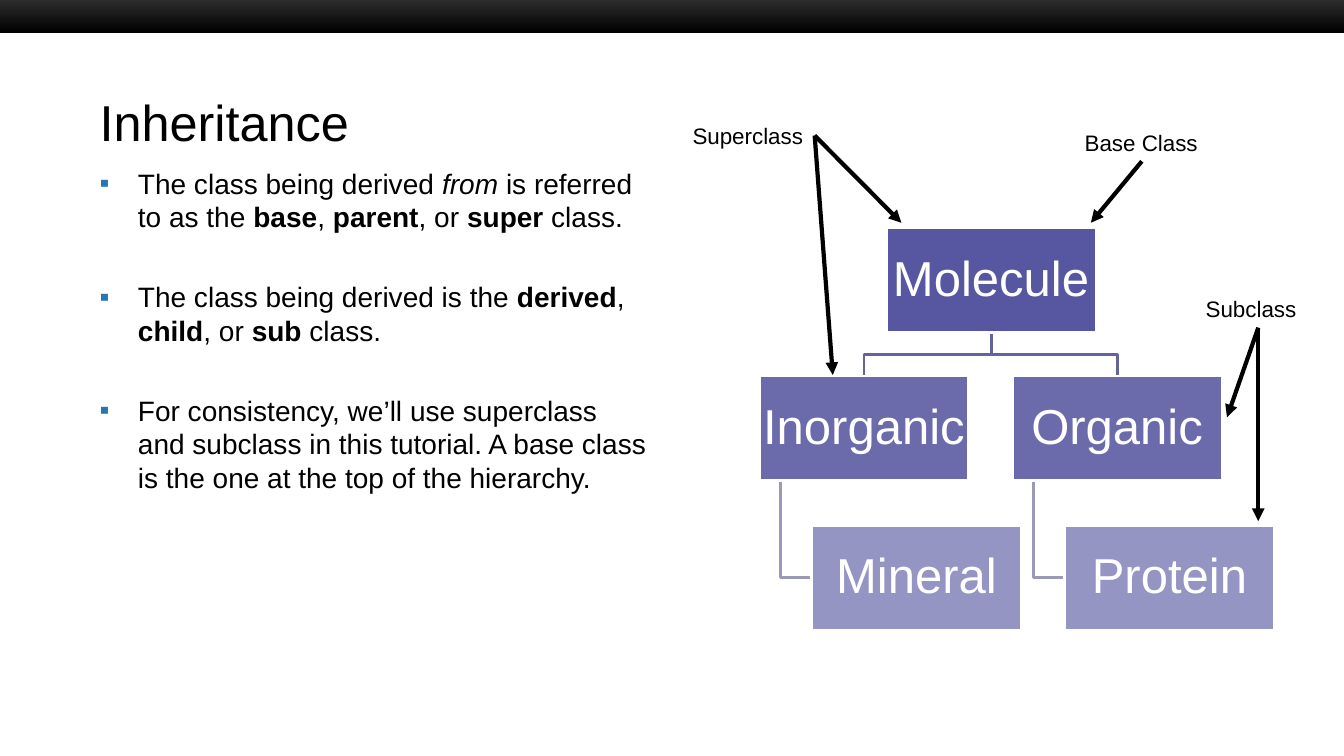
"""Builds the Inheritance slide: bullets beside an annotated class hierarchy."""
from dataclasses import dataclass

from lxml import etree
from pptx import Presentation
from pptx import util as u
from pptx.dml import color
from pptx.enum import shapes, text
from pptx.oxml import ns


@dataclass(frozen=True)
class Theme:
    """Colours, font and type sizes."""
    font: str = "Arial"
    ink: str = "000000"
    paper: str = "FFFFFF"
    bar_top: str = "333333"
    bullet: str = "2675B4"
    node: str = "2D2D8A"
    upper_link: str = "64649B"
    lower_link: str = "9A9AB8"
    title_size: int = 36
    node_size: int = 35
    body_size: int = 20
    label_size: int = 16


THEME = Theme()
NODE_WIDTH, NODE_HEIGHT = 2.08, 1.04
LEVEL_TOPS = (2.26, 3.73, 5.21)
LEVEL_ALPHAS = (80, 70, 50)
NODES = {"Molecule": (8.79, 0), "Inorganic": (7.53, 1), "Mineral": (8.05, 2),
         "Organic": (10.04, 1), "Protein": (10.56, 2)}
LINKS = (("Organic", "Protein"), ("Molecule", "Organic"),
         ("Inorganic", "Mineral"), ("Molecule", "Inorganic"))
BULLETS = (
    (("The class being derived ", {}), ("from", {"italic": True}),
     (" is referred to as the ", {}), ("base", {"bold": True}), (", ", {}),
     ("parent", {"bold": True}), (", or ", {}), ("super", {"bold": True}),
     (" class.", {})),
    (("The class being derived is the ", {}), ("derived", {"bold": True}),
     (", ", {}), ("child", {"bold": True}), (", or ", {}),
     ("sub", {"bold": True}), (" class.", {})),
    (("For consistency, we’ll use superclass and subclass in this tutorial. "
      "A base class is the one at the top of the hierarchy.", {}),),
)
LABELS = (
    ("Superclass", (6.77, 1.16, 1.31, 0.37), 3, ((8.94, 2.21), (8.26, 3.72))),
    ("Subclass", (11.86, 2.88, 1.24, 0.37), 2, ((12.17, 4.14), (12.48, 5.17))),
    ("Base Class", (10.66, 1.23, 1.33, 0.37), 2, ((10.82, 2.21),)),
)


def rgb(value):
    """Return a colour object for a hex value."""
    return color.RGBColor.from_string(value)


def inches(values):
    """Convert numbers to lengths."""
    return [u.Inches(value) for value in values]


def apply(target, values):
    """Set attributes from a dict of format values."""
    for name, value in values.items():
        setattr(target, name, value)


def add_span(para, words, size, ink=THEME.ink, **style):
    """Add a formatted run to a paragraph."""
    span = para.add_run()
    span.text = words
    apply(span.font, {"name": THEME.font, "size": u.Pt(size), **style})
    span.font.color.rgb = rgb(ink)


def add_text(page, area, words, size, anchor=text.MSO_ANCHOR.TOP):
    """Add a text box with one line of text."""
    box = page.shapes.add_textbox(*inches(area))
    apply(box.text_frame, {"word_wrap": True, "vertical_anchor": anchor})
    add_span(box.text_frame.paragraphs[0], words, size)
    return box


def add_bar(page):
    """Add the gradient bar along the top edge."""
    bar = page.shapes.add_shape(shapes.MSO_SHAPE.RECTANGLE,
                                *inches((0, -0.05, 13.33, 0.38)))
    bar.shadow.inherit = False
    bar.line.fill.background()
    bar.fill.gradient()
    bar.fill.gradient_angle = 270
    for stop, tone in zip(bar.fill.gradient_stops, (THEME.bar_top, THEME.ink)):
        stop.color.rgb = rgb(tone)


def add_bullet(para):
    """Give a paragraph a hanging square bullet."""
    props = para._p.get_or_add_pPr()
    props.set("marL", str(u.Inches(0.38)))
    props.set("indent", str(u.Inches(-0.38)))
    tint = etree.SubElement(props, ns.qn("a:buClr"))
    etree.SubElement(tint, ns.qn("a:srgbClr"), val=THEME.bullet)
    etree.SubElement(props, ns.qn("a:buFont"), typeface=THEME.font)
    etree.SubElement(props, ns.qn("a:buChar"), char="▪")


def add_bullets(page):
    """Add the bulleted explanation."""
    frame = page.shapes.add_textbox(*inches((0.89, 1.6, 5.67, 4.25))).text_frame
    frame.word_wrap = True
    for index, spans in enumerate(BULLETS):
        para = frame.add_paragraph() if index else frame.paragraphs[0]
        add_bullet(para)
        if index:
            para.space_before = u.Pt(33)
        for words, style in spans:
            add_span(para, words, THEME.body_size, **style)


def add_link(page, parent, child):
    """Draw the bent line from a parent node to its child."""
    (left, level), (child_left, child_level) = NODES[parent], NODES[child]
    bottom, child_top = LEVEL_TOPS[level] + NODE_HEIGHT, LEVEL_TOPS[child_level]
    if level == 0:
        start, end = left + NODE_WIDTH / 2, child_left + NODE_WIDTH / 2
        middle, tone = (bottom + child_top) / 2, THEME.upper_link
        points = ((start, bottom), (start, middle), (end, middle), (end, child_top))
    else:
        start, middle = left + 0.21, child_top + NODE_HEIGHT / 2
        tone = THEME.lower_link
        points = ((start, bottom), (start, middle), (child_left, middle))
    first, *rest = [inches(point) for point in points]
    builder = page.shapes.build_freeform(*first)
    builder.add_line_segments(rest, close=False)
    link = builder.convert_to_shape()
    link.shadow.inherit = False
    link.fill.background()
    link.line.color.rgb = rgb(tone)
    link.line.width = u.Pt(2)


def add_node(page, name, left, level):
    """Add one class box of the hierarchy."""
    node = page.shapes.add_shape(
        shapes.MSO_SHAPE.RECTANGLE,
        *inches((left, LEVEL_TOPS[level], NODE_WIDTH, NODE_HEIGHT)))
    node.shadow.inherit = False
    node.fill.solid()
    node.fill.fore_color.rgb = rgb(THEME.node)
    tint = node._element.spPr.find(ns.qn("a:solidFill"))[0]
    etree.SubElement(tint, ns.qn("a:alpha"), val=str(LEVEL_ALPHAS[level] * 1000))
    node.line.color.rgb = rgb(THEME.paper)
    node.line.width = u.Pt(2)
    inset = u.Inches(0.02)
    apply(node.text_frame, {
        "word_wrap": True, "vertical_anchor": text.MSO_ANCHOR.MIDDLE,
        "margin_left": inset, "margin_right": inset,
        "margin_top": inset, "margin_bottom": inset})
    para = node.text_frame.paragraphs[0]
    apply(para, {"alignment": text.PP_ALIGN.CENTER, "line_spacing": 0.9})
    add_span(para, name, THEME.node_size, THEME.paper)


def add_arrow(page, label, side, tip):
    """Draw an arrow from the side of a label to a point."""
    end = inches(tip)
    arrow = page.shapes.add_connector(shapes.MSO_CONNECTOR.STRAIGHT, *end, *end)
    arrow.begin_connect(label, side)
    arrow.line.color.rgb = rgb(THEME.ink)
    arrow.line.width = u.Pt(3)
    etree.SubElement(arrow.line._get_or_add_ln(), ns.qn("a:tailEnd"), type="triangle")
    etree.SubElement(arrow._element.spPr, ns.qn("a:effectLst"))


def main():
    """Build and save the slide."""
    deck = Presentation()
    apply(deck, {"slide_width": u.Inches(13.33), "slide_height": u.Inches(7.5)})
    page = deck.slides.add_slide(deck.slide_layouts[6])
    add_bar(page)
    add_text(page, (0.89, 0.83, 11.56, 0.75), "Inheritance", THEME.title_size,
             text.MSO_ANCHOR.MIDDLE)
    add_bullets(page)
    for parent, child in LINKS:
        add_link(page, parent, child)
    for name, (left, level) in NODES.items():
        add_node(page, name, left, level)
    for words, area, side, tips in LABELS:
        label = add_text(page, area, words, THEME.label_size)
        for tip in tips:
            add_arrow(page, label, side, tip)
    deck.save("out.pptx")


if __name__ == "__main__":
    main()
